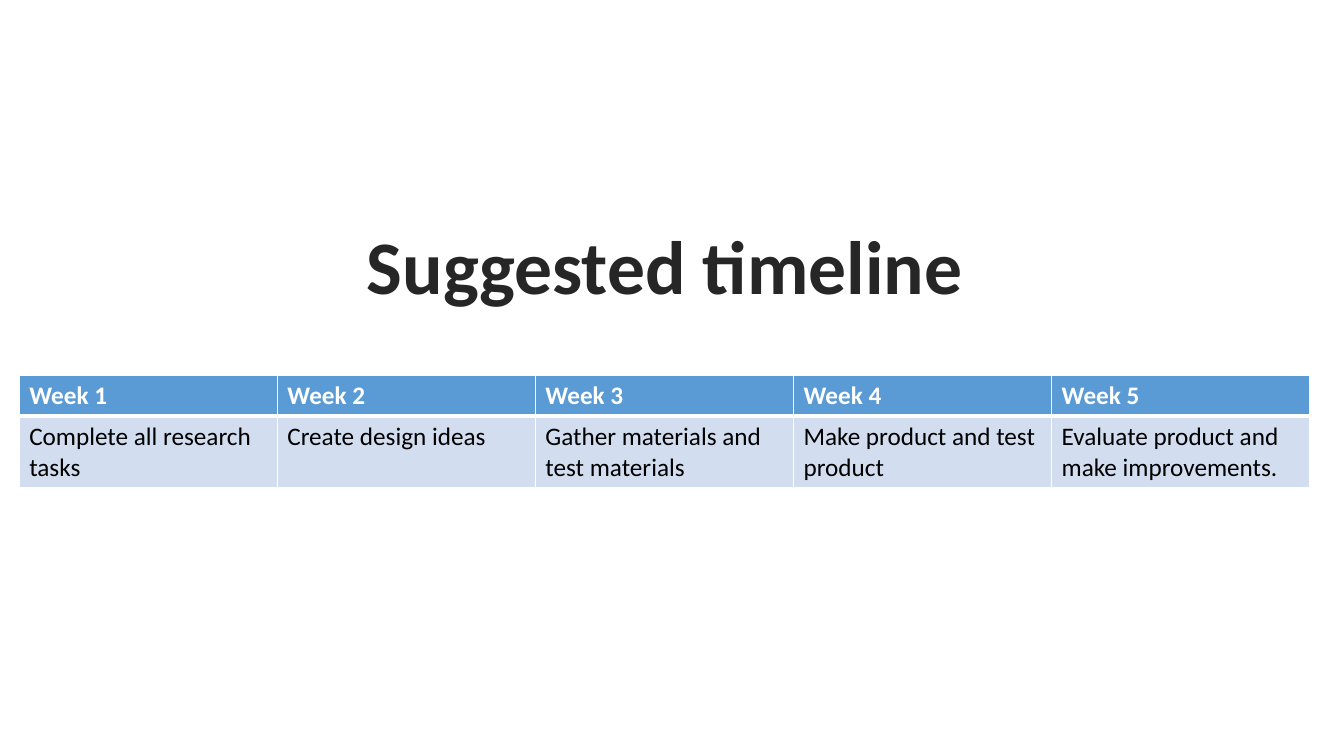
from dataclasses import dataclass

from lxml.etree import SubElement
from pptx import Presentation
from pptx.dml.color import RGBColor as RGB
from pptx.enum.text import MSO_ANCHOR, PP_ALIGN
from pptx.oxml.ns import qn
from pptx.util import Inches, Pt


@dataclass(frozen=True)
class Theme:
    font: str = "Calibri"
    title_size: int = 54
    cell_size: int = 18
    title: str = "262626"
    header_text: str = "FFFFFF"
    header_fill: str = "5B9BD5"
    body_text: str = "000000"
    body_fill: str = "D2DEEF"
    border: str = "FFFFFF"
    thin: int = 1
    thick: int = 3


THEME = Theme()
TIMELINE = [
    ("Week 1", "Complete all research tasks"),
    ("Week 2", "Create design ideas"),
    ("Week 3", "Gather materials and test materials"),
    ("Week 4", "Make product and test product"),
    ("Week 5", "Evaluate product and make improvements."),
]

# Grid, in inches
LEFT, TOP = 0.19, 3.72
COLUMN = 2.56
ROWS = (0.41, 0.7)


def format_text(tf, size, color, bold):
    for p in tf.paragraphs:
        for r in p.runs:
            r.font.name = THEME.font
            r.font.size = Pt(size)
            r.font.bold = bold
            r.font.color.rgb = RGB.from_string(color)


def add_title(s, text, left, top, width, height):
    sp = s.shapes.title
    sp.left, sp.top = Inches(left), Inches(top)
    sp.width, sp.height = Inches(width), Inches(height)
    tf = sp.text_frame
    tf.text = text
    tf.word_wrap = False
    tf.vertical_anchor = MSO_ANCHOR.MIDDLE
    tf.paragraphs[0].alignment = PP_ALIGN.CENTER
    format_text(tf, THEME.title_size, THEME.title, True)


def set_borders(cell, top, bottom):
    props = cell._tc.get_or_add_tcPr()
    widths = {"L": THEME.thin, "R": THEME.thin, "T": top, "B": bottom}
    for side, width in widths.items():
        ln = SubElement(props, qn(f"a:ln{side}"), w=str(Pt(width)))
        fill = SubElement(ln, qn("a:solidFill"))
        SubElement(fill, qn("a:srgbClr"), val=THEME.border)


def fill_cell(cell, text, is_header):
    # The thick rule runs between the header and the body
    if is_header:
        set_borders(cell, THEME.thin, THEME.thick)
        fill, color = THEME.header_fill, THEME.header_text
    else:
        set_borders(cell, THEME.thick, THEME.thin)
        fill, color = THEME.body_fill, THEME.body_text
    cell.fill.solid()
    cell.fill.fore_color.rgb = RGB.from_string(fill)
    cell.text_frame.text = text
    format_text(cell.text_frame, THEME.cell_size, color, is_header)


def add_timeline(s, weeks):
    table = s.shapes.add_table(
        len(ROWS), len(weeks), Inches(LEFT), Inches(TOP),
        Inches(COLUMN * len(weeks)), Inches(sum(ROWS))).table
    for row, height in zip(table.rows, ROWS):
        row.height = Inches(height)
    for col, week in enumerate(weeks):
        table.columns[col].width = Inches(COLUMN)
        for row, text in enumerate(week):
            fill_cell(table.cell(row, col), text, row == 0)


def main():
    prs = Presentation()
    prs.slide_width, prs.slide_height = Inches(13.33), Inches(7.5)
    s = prs.slides.add_slide(prs.slide_layouts[5])

    # Heading above the week table
    add_title(s, "Suggested timeline", 3.51, 2.12, 6.17, 1.01)
    add_timeline(s, TIMELINE)
    prs.save("out.pptx")


if __name__ == "__main__":
    main()
